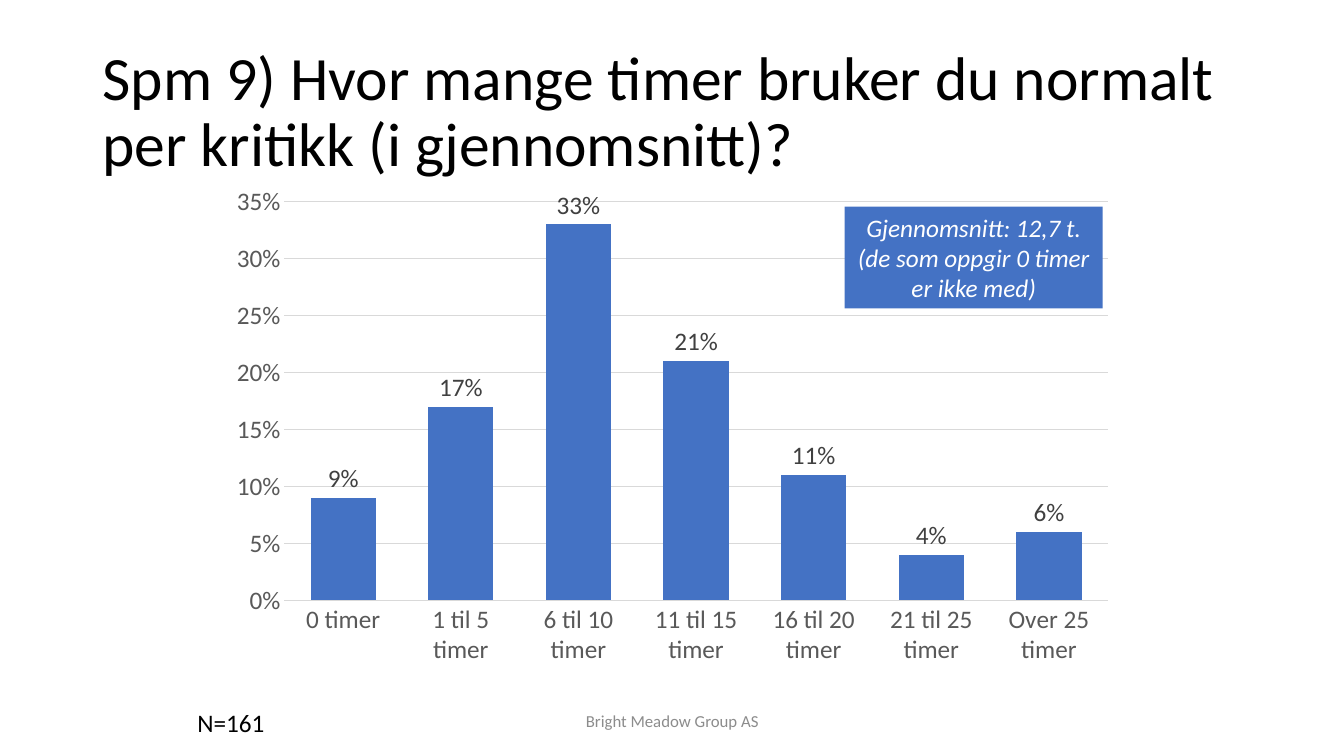
from dataclasses import dataclass

from pptx import Presentation
from pptx.chart.data import CategoryChartData
from pptx.dml.color import RGBColor
from pptx.enum.chart import XL_CHART_TYPE as ChartType
from pptx.enum.chart import XL_LABEL_POSITION as LabelPosition
from pptx.enum.chart import XL_TICK_MARK as TickMark
from pptx.enum.shapes import MSO_SHAPE as Preset
from pptx.enum.text import MSO_ANCHOR as Anchor
from pptx.enum.text import PP_ALIGN as Align
from pptx.slide import Slide
from pptx.util import Inches, Pt

WIDTH, HEIGHT = Inches(13.33), Inches(7.5)
HOURS = {
    "0 timer": 0.09,
    "1 til 5 timer": 0.17,
    "6 til 10 timer": 0.33,
    "11 til 15 timer": 0.21,
    "16 til 20 timer": 0.11,
    "21 til 25 timer": 0.04,
    "Over 25 timer": 0.06,
}


def rgb(code):
    return RGBColor.from_string(code)


def box(left, top, width, height):
    return [int(share * side / 100) for share, side in
            zip((left, top, width, height), (WIDTH, HEIGHT) * 2)]


@dataclass
class SurveySlide:
    slide: Slide
    face: str = "Calibri"
    accent: str = "4472C4"
    grid: str = "D9D9D9"
    axis_ink: str = "595959"
    label_ink: str = "404040"
    size: int = 18

    def style(self, font, color, size=None):
        font.name = self.face
        font.size = Pt(size or self.size)
        font.color.rgb = rgb(color)

    def fill_text(self, frame, words, color, size=None, align=Align.LEFT,
                  anchor=Anchor.MIDDLE, wrap=True):
        frame.word_wrap = wrap
        frame.vertical_anchor = anchor
        paragraph = frame.paragraphs[0]
        paragraph.text = words
        paragraph.alignment = align
        self.style(paragraph.font, color, size)
        return paragraph

    def text(self, area, words, color="000000", **look):
        frame = self.slide.shapes.add_textbox(*box(*area)).text_frame
        return self.fill_text(frame, words, color, **look)

    def callout(self, area, words):
        panel = self.slide.shapes.add_shape(Preset.RECTANGLE, *box(*area))
        panel.shadow.inherit = False
        panel.fill.solid()
        panel.fill.fore_color.rgb = rgb(self.accent)
        panel.line.fill.background()
        message = self.fill_text(panel.text_frame, words, "FFFFFF", align=Align.CENTER)
        message.font.italic = True

    def rule(self, line):
        line.color.rgb = rgb(self.grid)
        line.width = Pt(0.75)

    def columns(self, area, shares):
        data = CategoryChartData(number_format="0%")
        data.categories = list(shares)
        data.add_series("Andel", list(shares.values()))
        chart = self.slide.shapes.add_chart(
            ChartType.COLUMN_CLUSTERED, *box(*area), data).chart
        chart.has_legend = False
        chart.has_title = False
        self.style(chart.font, "000000")

        for axis in (chart.category_axis, chart.value_axis):
            axis.major_tick_mark = axis.minor_tick_mark = TickMark.NONE
            self.style(axis.tick_labels.font, self.axis_ink)
        self.rule(chart.category_axis.format.line)
        percent = chart.value_axis
        percent.minimum_scale, percent.maximum_scale = 0, 0.35
        percent.major_unit = 0.05
        percent.format.line.fill.background()
        percent.tick_labels.number_format = "0%"
        percent.tick_labels.number_format_is_linked = False
        self.rule(percent.major_gridlines.format.line)

        plot = chart.plots[0]
        plot.gap_width, plot.overlap = 80, -27
        plot.vary_by_categories = False
        bars = plot.series[0]
        bars.format.fill.solid()
        bars.format.fill.fore_color.rgb = rgb(self.accent)
        labels = bars.data_labels
        labels.show_value = True
        labels.position = LabelPosition.OUTSIDE_END
        labels.number_format = "0%"
        labels.number_format_is_linked = False
        self.style(labels.font, self.label_ink)


def main():
    deck = Presentation()
    deck.slide_width, deck.slide_height = WIDTH, HEIGHT
    survey = SurveySlide(deck.slides.add_slide(deck.slide_layouts[6]))

    question = survey.text(
        (6.9, 5.33, 86.25, 19.33),
        "Spm 9) Hvor mange timer bruker du normalt per kritikk (i gjennomsnitt)?",
        size=44)
    question.line_spacing = 0.9
    survey.columns((16.27, 23.33, 67.5, 66), HOURS)
    survey.text((33.15, 92.67, 33.75, 5.33), "Bright Meadow Group AS",
                "8C8C8C", size=12, align=Align.CENTER)
    survey.callout((62.85, 27.33, 19.2, 13.47),
                   "Gjennomsnitt: 12,7 t.\n(de som oppgir 0 timer er ikke med)")
    survey.text((13.95, 92.93, 6.52, 5.33), "N=161", anchor=Anchor.TOP, wrap=False)

    deck.save("out.pptx")


if __name__ == "__main__":
    main()
